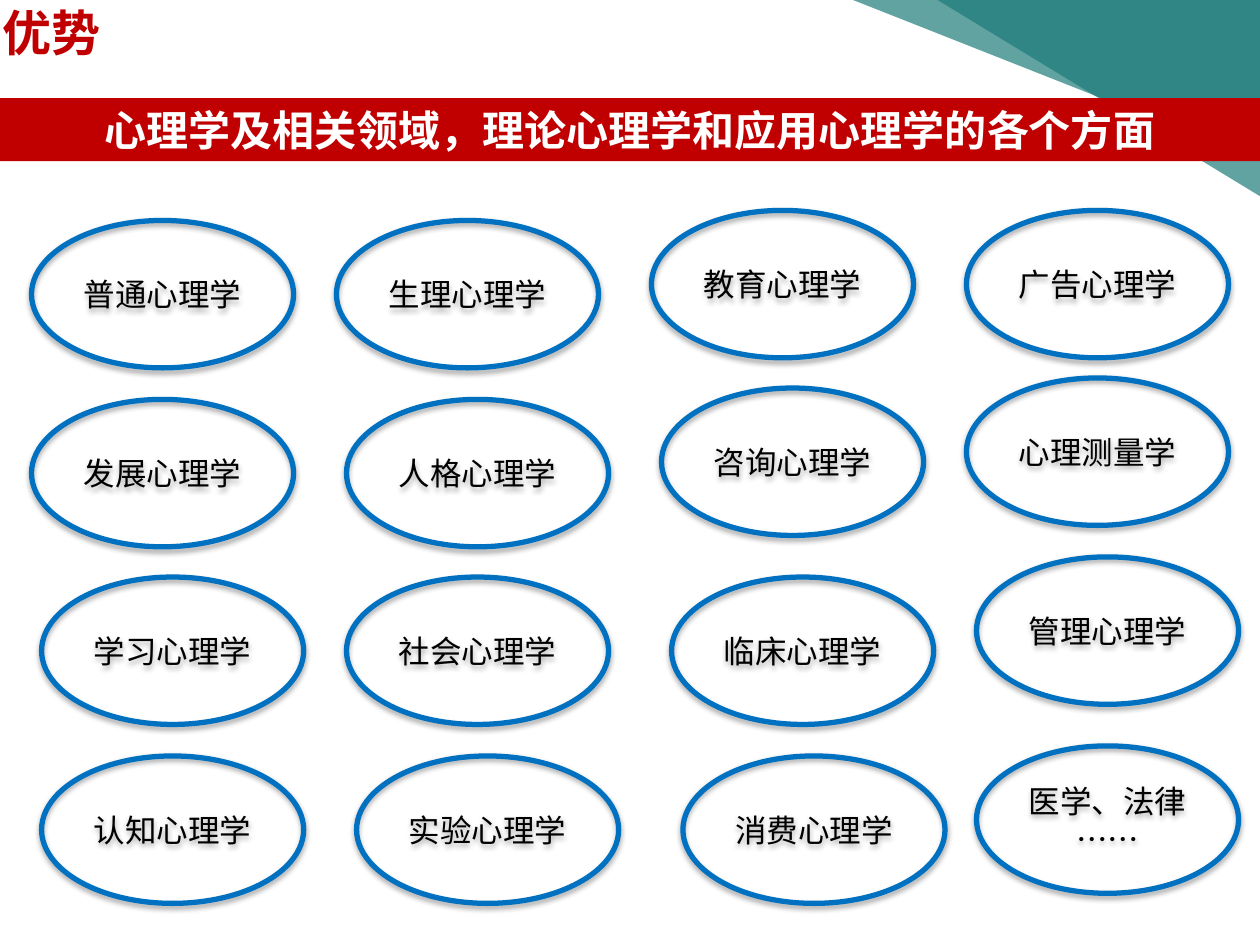
from lxml import etree
from pptx import Presentation
from pptx.dml.color import RGBColor
from pptx.enum.shapes import MSO_SHAPE as SHAPE
from pptx.enum.text import MSO_ANCHOR as ANCHOR, PP_ALIGN as ALIGN
from pptx.oxml.ns import qn
from pptx.util import Inches, Pt

FONT = "Noto Sans CJK SC"
TEAL, RED, BLUE, BLACK, WHITE = "1B7A78", "C00000", "0070C0", "000000", "FFFFFF"
OVAL_SIZE = 2.08, 1.17

COLUMNS = [
    ([0.25, 0.25, 0.33, 0.33], [1.75, 3.17, 4.58, 6],
     ["普通心理学", "发展心理学", "学习心理学", "认知心理学"]),
    ([2.67, 2.75, 2.75, 2.83], [1.75, 3.17, 4.58, 6],
     ["生理心理学", "人格心理学", "社会心理学", "实验心理学"]),
    ([5.17, 5.25, 5.33, 5.42], [1.67, 3.08, 4.58, 6],
     ["教育心理学", "咨询心理学", "临床心理学", "消费心理学"]),
    ([7.67, 7.67, 7.75, 7.75], [1.67, 3, 4.42, 5.92],
     ["广告心理学", "心理测量学", "管理心理学", "医学、法律\n……"]),
]


def color(value):
    return RGBColor.from_string(value)


class Deck:
    def __init__(self, prs):
        self.slide = prs.slides.add_slide(prs.slide_layouts[6])

    def shape(self, kind, box, fill=None):
        sp = self.slide.shapes.add_shape(kind, *map(Inches, box))
        sp.shadow.inherit = False
        sp.line.fill.background()
        if fill:
            sp.fill.solid()
            sp.fill.fore_color.rgb = color(fill)
        else:
            sp.fill.background()
        return sp

    def label(self, sp, text, size, ink, align, anchor, bold=False):
        tf = sp.text_frame
        tf.word_wrap = True
        tf.vertical_anchor = anchor
        tf.text = text
        for p in tf.paragraphs:
            p.alignment = align
            p.font.size = Pt(size)
            p.font.bold = bold
            p.font.color.rgb = color(ink)
            p.font.name = FONT
            props = p._p.pPr.find(qn("a:defRPr"))
            etree.SubElement(props, qn("a:ea"), typeface=FONT)

    def triangle(self, box):
        sp = self.shape(SHAPE.RIGHT_TRIANGLE, box, TEAL)
        xfrm = sp._element.spPr.xfrm
        xfrm.set("flipH", "1")
        xfrm.set("flipV", "1")
        clr = sp._element.spPr.find(".//" + qn("a:srgbClr"))
        etree.SubElement(clr, qn("a:alpha"), val="69000")

    def title(self, box, text):
        sp = self.slide.shapes.add_textbox(*map(Inches, box))
        self.label(sp, text, 28, RED, ALIGN.LEFT, ANCHOR.TOP, True)

    def banner(self, box, text):
        sp = self.shape(SHAPE.RECTANGLE, box, RED)
        self.label(sp, text, 24, WHITE, ALIGN.CENTER, ANCHOR.MIDDLE, True)

    def oval(self, left, top, text):
        sp = self.shape(SHAPE.OVAL, (left, top, *OVAL_SIZE))
        sp.line.color.rgb = color(BLUE)
        sp.line.width = Pt(3)
        effects = sp._element.spPr.find(qn("a:effectLst"))
        shadow = etree.SubElement(effects, qn("a:outerShdw"), blurRad="40000",
                                  dist="23000", dir="5400000", rotWithShape="0")
        clr = etree.SubElement(shadow, qn("a:srgbClr"), val=BLACK)
        etree.SubElement(clr, qn("a:alpha"), val="35000")
        self.label(sp, text, 18, BLACK, ALIGN.CENTER, ANCHOR.MIDDLE)


def main():
    prs = Presentation()
    prs.slide_width, prs.slide_height = Inches(10), Inches(7.5)
    deck = Deck(prs)
    deck.triangle((7.44, 0, 2.58, 1.57))
    deck.triangle((6.77, 0, 3.24, 1.28))
    deck.title((-0.08, -0.03, 5.25, 0.86), "优势")
    for lefts, tops, names in COLUMNS:
        for left, top, name in zip(lefts, tops, names):
            deck.oval(left, top, name)
    deck.banner((0, 0.78, 10, 0.5), "心理学及相关领域，理论心理学和应用心理学的各个方面")
    prs.save("out.pptx")


if __name__ == "__main__":
    main()
